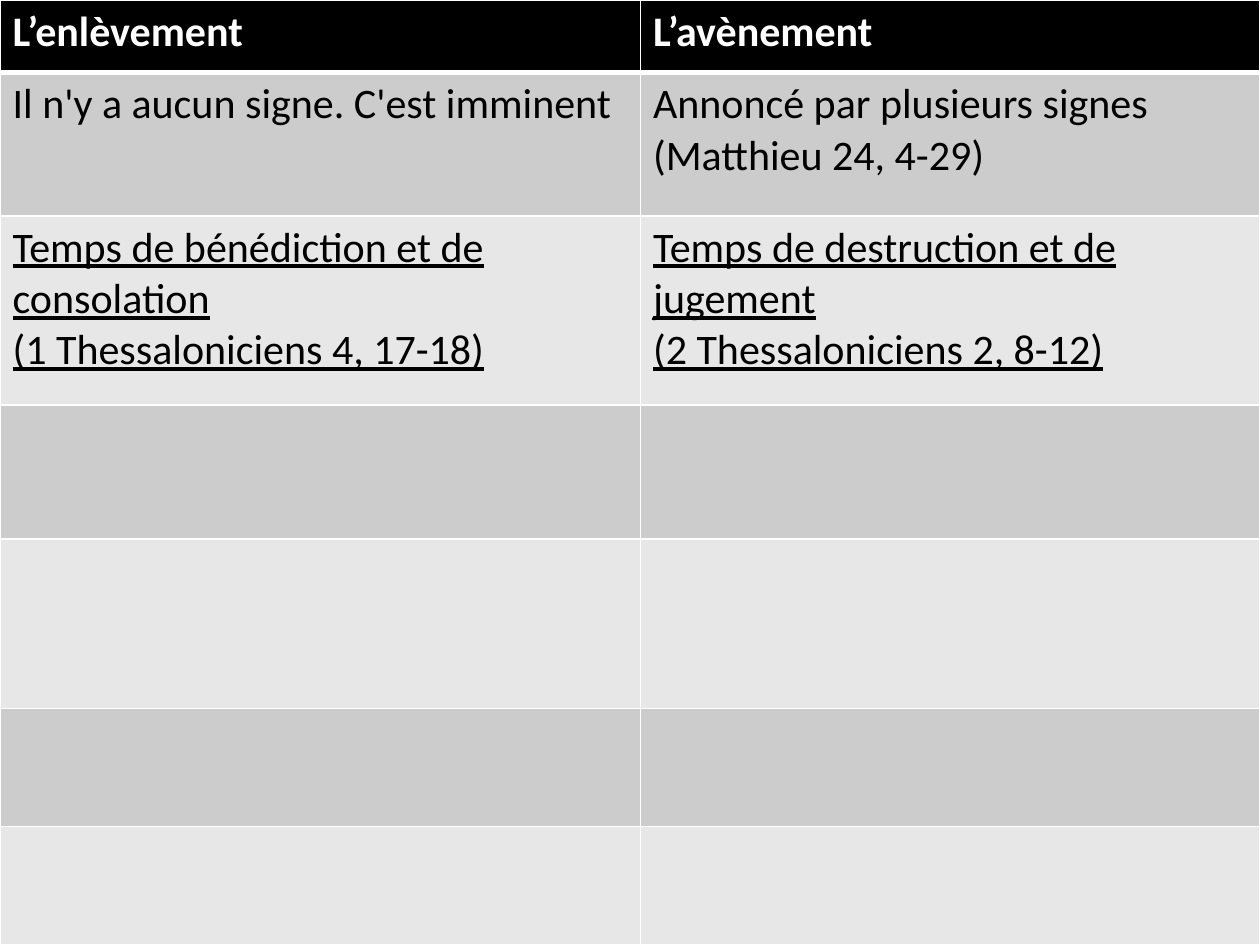
"""Build a slide with a table comparing the rapture and the advent."""
from pptx import Presentation
from pptx.dml.color import RGBColor
from pptx.oxml import parse_xml
from pptx.oxml.ns import nsdecls
from pptx.util import Pt

COLUMN_WIDTHS = [366, 354]
ROW_HEIGHTS = [41.5, 82, 108, 76.5, 97, 67.5, 67.5]
ROWS = [
    ("L’enlèvement", "L’avènement"),
    ("Il n'y a aucun signe. C'est imminent",
     "Annoncé par plusieurs signes\n(Matthieu 24, 4-29)"),
    ("Temps de bénédiction et de consolation\n(1 Thessaloniciens 4, 17-18)",
     "Temps de destruction et de jugement\n(2 Thessaloniciens 2, 8-12)"),
]
UNDERLINED_ROW = 2


def color(value):
    return RGBColor.from_string(value)


def write_text(frame, text, size=24, ink="000000", bold=False, underline=False):
    for index, line in enumerate(text.split("\n")):
        para = frame.add_paragraph() if index else frame.paragraphs[0]
        span = para.add_run()
        span.text = line
        font = span.font
        font.name, font.size = "Calibri", Pt(size)
        font.bold, font.underline = bold, underline
        font.color.rgb = color(ink)


def set_borders(cell, ink="FFFFFF", **widths):
    properties = cell._tc.get_or_add_tcPr()
    for index, side in enumerate("LRTB"):
        width = Pt(widths.get(side, 1))
        properties.insert(index, parse_xml(
            f'<a:ln{side} {nsdecls("a")} w="{width}"><a:solidFill>'
            f'<a:srgbClr val="{ink}"/></a:solidFill></a:ln{side}>'))


def style_cell(cell, row):
    banded = "CCCCCC" if row % 2 else "E7E7E7"
    cell.fill.solid()
    cell.fill.fore_color.rgb = color(banded if row else "000000")
    set_borders(cell, T=3 if row == 1 else 1, B=1 if row else 3)


def add_comparison(page):
    frame = page.shapes.add_table(
        len(ROW_HEIGHTS), len(COLUMN_WIDTHS), Pt(0), Pt(0),
        Pt(sum(COLUMN_WIDTHS)), Pt(sum(ROW_HEIGHTS)))
    table = frame.table
    table.first_row = table.horz_banding = False
    for column, width in zip(table.columns, COLUMN_WIDTHS):
        column.width = Pt(width)
    for index, height in enumerate(ROW_HEIGHTS):
        row = table.rows[index]
        row.height = Pt(height)
        for cell in row.cells:
            style_cell(cell, index)
    for index, texts in enumerate(ROWS):
        for cell, text in zip(table.rows[index].cells, texts):
            write_text(cell.text_frame, text, bold=index == 0,
                       ink="000000" if index else "FFFFFF",
                       underline=index == UNDERLINED_ROW)


def main():
    deck = Presentation()
    deck.slide_width, deck.slide_height = Pt(720), Pt(540)
    page = deck.slides.add_slide(deck.slide_layouts[6])
    add_comparison(page)
    deck.save("out.pptx")


if __name__ == "__main__":
    main()
